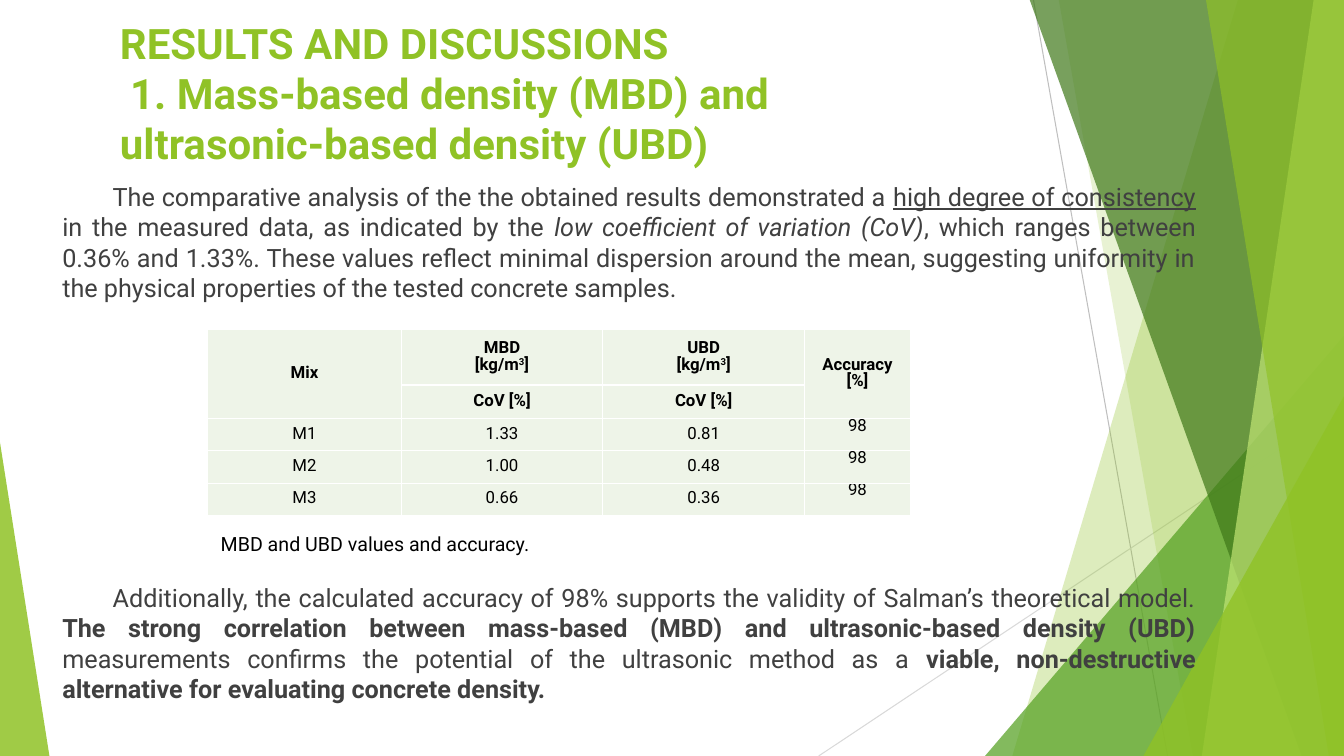
"""Build the slide on mass-based and ultrasonic-based density results."""
from dataclasses import dataclass

from lxml import etree
from pptx import Presentation
from pptx.dml.color import RGBColor
from pptx.enum.shapes import MSO_CONNECTOR, MSO_SHAPE
from pptx.enum.text import MSO_ANCHOR, MSO_AUTO_SIZE, PP_ALIGN
from pptx.oxml.ns import qn
from pptx.util import Inches, Pt

LEFT, CENTER, JUSTIFY = PP_ALIGN.LEFT, PP_ALIGN.CENTER, PP_ALIGN.JUSTIFY
TOP, MIDDLE = MSO_ANCHOR.TOP, MSO_ANCHOR.MIDDLE
NO_AUTOFIT = MSO_AUTO_SIZE.NONE
STRAIGHT, TRIANGLE = MSO_CONNECTOR.STRAIGHT, MSO_SHAPE.ISOSCELES_TRIANGLE


@dataclass(frozen=True)
class Theme:
    font: str = "Roboto"
    green: str = "90C226"
    leaf: str = "54A021"
    forest: str = "3F7819"
    lime: str = "C0E474"
    cell: str = "EEF4E8"
    border: str = "FFFFFF"
    body: str = "404040"
    black: str = "000000"
    title_size: int = 30
    body_size: int = 18
    caption_size: int = 14
    table_size: int = 12


THEME = Theme()
WIDTH, HEIGHT = 13.33, 7.5
BAND_TOP = -0.01

TITLE = ["RESULTS AND DISCUSSIONS",
         "1. Mass-based density (MBD) and",
         "ultrasonic-based density (UBD)"]
CONSISTENCY = [
    "The comparative analysis of the the obtained results demonstrated a ",
    ("high degree of consistency", "u"),
    " in the measured data, as indicated by the ",
    ("low coefficient of variation (CoV)", "i"),
    ", which ranges between 0.36% and 1.33%. These values reflect minimal "
    "dispersion around the mean, suggesting uniformity in the physical "
    "properties of the tested concrete samples."]
CORRELATION = [
    "Additionally, the calculated accuracy of 98% supports the validity of "
    "Salman’s theoretical model. ",
    ("The strong correlation between mass-based (MBD) and ultrasonic-based "
     "density (UBD) ", "b"),
    "measurements confirms the potential of the ultrasonic method as a ",
    ("viable, non-destructive alternative for evaluating concrete density.", "b")]
CAPTION = "MBD and UBD values and accuracy."
UNIT = ["[kg/m", ("3", "sup"), "]"]
DENSITY_ROWS = [
    [["Mix"], ["MBD", UNIT], ["UBD", UNIT], ["Accuracy", "[%]"]],
    [None, ["CoV [%]"], ["CoV [%]"], None],
    [["M1"], ["1.33"], ["0.81"], ["98"]],
    [["M2"], ["1.00"], ["0.48"], ["98"]],
    [["M3"], ["0.66"], ["0.36"], ["98"]],
]
HEADER_ROWS = 2
COLUMN_WIDTHS = [1.92, 2, 2, 1.05]
ROW_HEIGHTS = [0.55] + [0.32] * 4

RAYS = [((10.25, 0), (11.58, HEIGHT), "BFBFBF"),
        ((WIDTH, 4.03), (8.12, HEIGHT), "D9D9D9")]
FACETS = [
    ("band", 12.28, 10.04, THEME.green, 30),
    ("band", 10.5, 11.83, THEME.green, 20),
    ("right corner", 3.56, 4.17, THEME.leaf, 72),
    ("band", 10.21, 12.91, THEME.forest, 70),
    ("band", 13.03, 11.92, THEME.lime, 70),
    ("band", 11.96, 13.18, THEME.green, 65),
    ("right corner", 1.99, 3.57, THEME.green, 80),
    ("left corner", 0.49, 3.11, THEME.green, 85),
]


def write(frame, paragraphs, *, size, color, align=LEFT, bold=False,
          indents=(), line=None):
    """Fill a text frame; a paragraph is a string or a list of runs."""
    frame.word_wrap = True
    for index, content in enumerate(paragraphs):
        paragraph = frame.paragraphs[0] if index == 0 else frame.add_paragraph()
        paragraph.alignment = align
        paragraph.space_before = Pt(0)
        if line:
            paragraph.line_spacing = Pt(line)
        if index < len(indents):
            paragraph._p.get_or_add_pPr().set("indent", str(Inches(indents[index])))
        for piece in [content] if isinstance(content, str) else content:
            words, mark = (piece, "") if isinstance(piece, str) else piece
            run = paragraph.add_run()
            run.text = words
            run.font.name = THEME.font
            run.font.size = Pt(size)
            run.font.color.rgb = RGBColor.from_string(color)
            run.font.bold = bold or mark == "b"
            run.font.italic = mark == "i"
            run.font.underline = mark == "u"
            if mark == "sup":
                run._r.get_or_add_rPr().set("baseline", "30000")


def add_text(slide, box, paragraphs, **style):
    """Add a text box holding the paragraphs."""
    write(slide.shapes.add_textbox(*map(Inches, box)).text_frame,
          paragraphs, **style)


def add_ray(slide, start, end, color):
    """Add a thin background line."""
    ray = slide.shapes.add_connector(STRAIGHT, *map(Inches, start + end))
    ray.line.color.rgb = RGBColor.from_string(color)
    ray.line.width = Pt(0.75)
    etree.SubElement(ray._element.spPr, qn("a:effectLst"))


def add_facet(slide, kind, first, second, color, opacity):
    """Add a band (top x, bottom x) or a corner triangle (width, height)."""
    if kind == "band":
        corners = [(first, BAND_TOP), (WIDTH, BAND_TOP),
                   (WIDTH, HEIGHT), (second, HEIGHT)]
        points = [(Inches(x), Inches(y)) for x, y in corners]
        outline = slide.shapes.build_freeform(*points[0])
        outline.add_line_segments(points[1:], close=True)
        facet = outline.convert_to_shape()
    else:
        on_right = kind == "right corner"
        box = (WIDTH - first if on_right else 0, HEIGHT - second, first, second)
        facet = slide.shapes.add_shape(TRIANGLE, *map(Inches, box))
        facet.adjustments[0] = 1.0 if on_right else 0.0
    facet.shadow.inherit = False
    facet.line.fill.background()
    facet.fill.solid()
    facet.fill.fore_color.rgb = RGBColor.from_string(color)
    shade = facet._element.spPr.find(qn("a:solidFill"))[0]
    etree.SubElement(shade, qn("a:alpha"), val=str(opacity * 1000))


def add_borders(cell):
    """Draw the four borders of a table cell."""
    properties = cell._tc.get_or_add_tcPr()
    for position, side in enumerate(("lnL", "lnR", "lnT", "lnB")):
        border = etree.Element(qn("a:" + side), w=str(Pt(1)))
        fill = etree.SubElement(border, qn("a:solidFill"))
        etree.SubElement(fill, qn("a:srgbClr"), val=THEME.border)
        properties.insert(position, border)


def add_density_table(slide):
    """Add the table of densities and accuracy."""
    box = (2.06, 3.27, sum(COLUMN_WIDTHS), sum(ROW_HEIGHTS))
    table = slide.shapes.add_table(len(ROW_HEIGHTS), len(COLUMN_WIDTHS),
                                   *map(Inches, box)).table
    table.first_row = table.horz_banding = False
    for column, width in zip(table.columns, COLUMN_WIDTHS):
        column.width = Inches(width)
    for row, height in zip(table.rows, ROW_HEIGHTS):
        row.height = Inches(height)
    last = len(COLUMN_WIDTHS) - 1
    for merged in (0, last):
        table.cell(0, merged).merge(table.cell(HEADER_ROWS - 1, merged))
    for r, values in enumerate(DENSITY_ROWS):
        for c, value in enumerate(values):
            cell = table.cell(r, c)
            cell.margin_left = cell.margin_right = Inches(0.05)
            cell.margin_top = cell.margin_bottom = 0
            is_header = r < HEADER_ROWS
            cell.vertical_anchor = MIDDLE if is_header or c < last else TOP
            cell.fill.solid()
            cell.fill.fore_color.rgb = RGBColor.from_string(THEME.cell)
            add_borders(cell)
            if value:
                write(cell.text_frame, value, size=THEME.table_size, line=12,
                      color=THEME.black, align=CENTER, bold=is_header)


def main():
    """Assemble and save the slide."""
    deck = Presentation()
    deck.slide_width, deck.slide_height = Inches(WIDTH), Inches(HEIGHT)
    slide = deck.slides.add_slide(deck.slide_layouts[5])
    for ray in RAYS:
        add_ray(slide, *ray)
    for facet in FACETS:
        add_facet(slide, *facet)
    body = dict(size=THEME.body_size, color=THEME.body, align=JUSTIFY, indents=[0.5])
    add_text(slide, (0.52, 1.75, 11.44, 1.4), [CONSISTENCY], **body)
    add_density_table(slide)
    add_text(slide, (2.09, 5.23, 8.27, 0.34), [CAPTION],
             size=THEME.caption_size, color=THEME.black)
    add_text(slide, (0.52, 5.73, 11.44, 1.38), [CORRELATION], **body)
    title = slide.shapes.title
    title.left, title.top, title.width, title.height = map(
        Inches, (1.09, 0.12, 9.08, 1.64))
    title.text_frame.auto_size = NO_AUTOFIT
    title.text_frame.vertical_anchor = TOP
    write(title.text_frame, TITLE, size=THEME.title_size, color=THEME.green,
          bold=True, indents=[0, 0.1, 0])
    deck.save("out.pptx")


if __name__ == "__main__":
    main()
